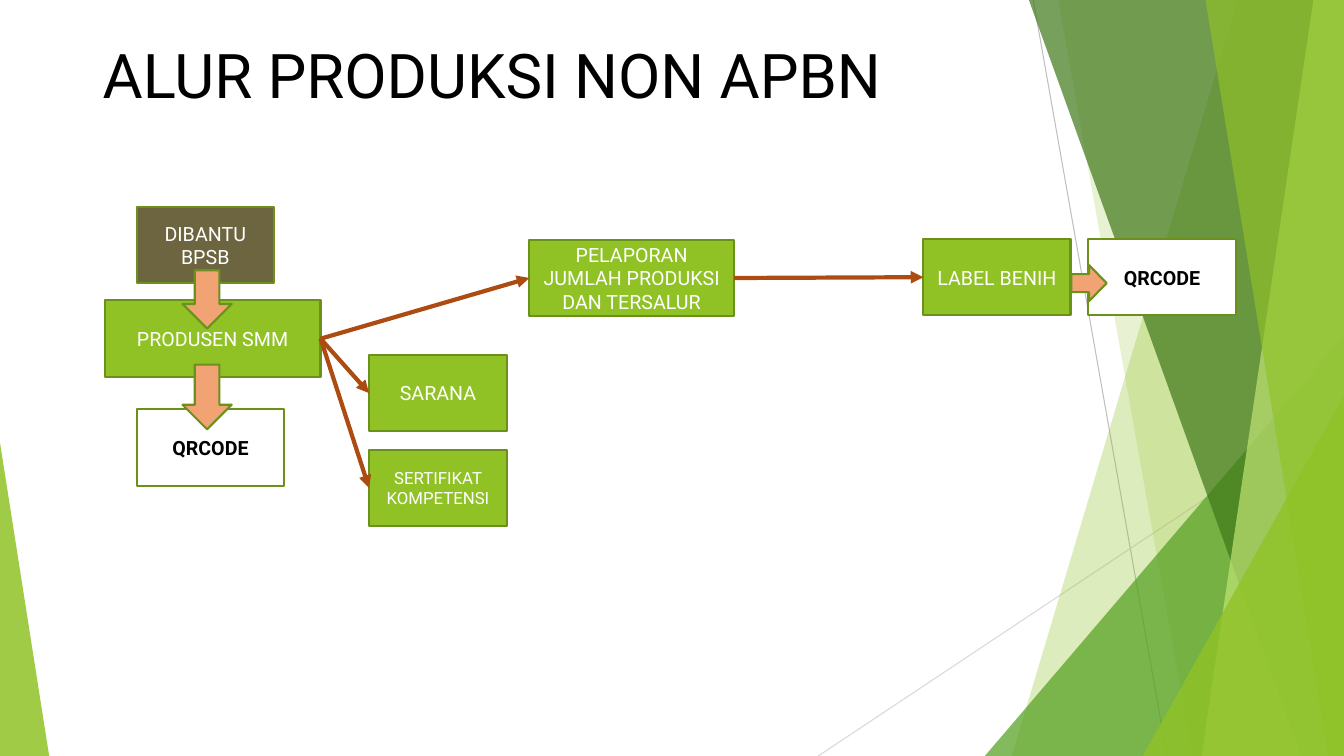
from dataclasses import dataclass

from lxml.etree import SubElement
from pptx import Presentation
from pptx.dml.color import RGBColor
from pptx.enum.shapes import MSO_CONNECTOR, MSO_SHAPE
from pptx.enum.text import MSO_ANCHOR, PP_ALIGN
from pptx.oxml.ns import qn
from pptx.shapes.autoshape import Shape
from pptx.shapes.connector import Connector
from pptx.slide import Slide
from pptx.util import Cm, Pt

WIDTH, HEIGHT = 33.87, 19.05
FONT = "Roboto"
GREEN, DARK_GREEN, WHITE, BLACK = "90C226", "6B901C", "FFFFFF", "000000"
OLIVE, PEACH, RUST = "6D6540", "F1A374", "AD4C12"
RIGHT_SIDE, LEFT_SIDE = 3, 1
BOX_HEIGHT = 1.93


# All lengths are in centimetres
@dataclass
class Panel:
    """Band that fills the slide from a slanted left edge to the right side."""
    top_x: float
    bottom_x: float
    color: str
    opacity: int


@dataclass
class Wedge:
    """Right triangle standing on the bottom of the slide."""
    left: float
    top: float
    width: float
    apex: float
    color: str
    opacity: int


@dataclass
class Box:
    name: str
    text: str
    left: float
    top: float
    width: float
    fill: str = GREEN
    color: str = WHITE
    size: int = 14
    bold: bool = False


@dataclass
class Arrow:
    kind: MSO_SHAPE
    left: float
    top: float
    width: float
    height: float


HAIRLINES = [
    ((26.04, 0), (29.41, HEIGHT), "BFBFBF"),
    ((WIDTH, 10.24), (20.62, HEIGHT), "D9D9D9"),
]
BACKDROP = [
    Panel(31.19, 25.5, GREEN, 30),
    Panel(26.67, 30.05, GREEN, 20),
    Wedge(24.82, 8.46, 9.05, 1, "54A021", 72),
    Panel(25.93, 32.79, "3F7819", 70),
    Panel(33.1, 30.28, "C0E474", 70),
    Panel(30.38, 33.48, GREEN, 65),
    Wedge(28.8, 9.98, 5.07, 1, GREEN, 80),
    Wedge(0, 11.15, 1.24, 0, GREEN, 85),
]
BOXES = [
    Box("produsen", "PRODUSEN SMM", 2.64, 7.57, 5.44),
    Box("sarana", "SARANA", 9.3, 8.94, 3.48),
    Box("sertifikat", "SERTIFIKAT KOMPETENSI", 9.3, 11.33, 3.48, size=12),
    Box("pelaporan", "PELAPORAN JUMLAH PRODUKSI DAN TERSALUR", 13.34, 6.04, 5.16),
    Box("label", "LABEL BENIH", 23.27, 6.02, 3.71),
    Box("qrcode label", "QRCODE", 27.43, 6.02, 3.71, WHITE, BLACK, bold=True),
    Box("qrcode produsen", "QRCODE", 3.45, 10.31, 3.71, WHITE, BLACK, bold=True),
    Box("bpsb", "DIBANTU BPSB", 3.45, 5.21, 3.45, OLIVE),
]
FLOWS = [
    ("produsen", "pelaporan"),
    ("produsen", "sarana"),
    ("produsen", "sertifikat"),
    ("pelaporan", "label"),
]
ARROWS = [
    Arrow(MSO_SHAPE.DOWN_ARROW, 4.6, 9.19, 1.24, 1.63),
    Arrow(MSO_SHAPE.RIGHT_ARROW, 27, 6.68, 0.89, 0.91),
    Arrow(MSO_SHAPE.DOWN_ARROW, 4.6, 6.81, 1.24, 1.47),
]


def rgb(color: str) -> RGBColor:
    return RGBColor.from_string(color)


def paint(shape: Shape, fill: str, line: str | None = None, opacity: int = 100) -> None:
    shape.shadow.inherit = False
    shape.fill.solid()
    shape.fill.fore_color.rgb = rgb(fill)
    if opacity < 100:
        fill_color = shape.fill._xPr.find(qn("a:solidFill"))[0]
        SubElement(fill_color, qn("a:alpha"), val=str(opacity * 1000))
    if line:
        shape.line.color.rgb = rgb(line)
        shape.line.width = Pt(1.5)
    else:
        shape.line.fill.background()


def add_line(slide: Slide, start: tuple[float, float], end: tuple[float, float],
             color: str, width: float) -> Connector:
    connector = slide.shapes.add_connector(
        MSO_CONNECTOR.STRAIGHT, *(Cm(value) for value in (*start, *end)))
    connector.line.color.rgb = rgb(color)
    connector.line.width = Pt(width)
    SubElement(connector._element.spPr, qn("a:effectLst"))
    return connector


def add_panel(slide: Slide, panel: Panel) -> None:
    builder = slide.shapes.build_freeform(Cm(panel.top_x), 0)
    corners = [(WIDTH, 0), (WIDTH, HEIGHT), (panel.bottom_x, HEIGHT)]
    builder.add_line_segments([(Cm(x), Cm(y)) for x, y in corners], close=True)
    paint(builder.convert_to_shape(), panel.color, opacity=panel.opacity)


def add_wedge(slide: Slide, wedge: Wedge) -> None:
    shape = slide.shapes.add_shape(
        MSO_SHAPE.ISOSCELES_TRIANGLE, Cm(wedge.left), Cm(wedge.top),
        Cm(wedge.width), Cm(HEIGHT - wedge.top))
    shape.adjustments[0] = wedge.apex
    paint(shape, wedge.color, opacity=wedge.opacity)


def add_box(slide: Slide, box: Box) -> Shape:
    shape = slide.shapes.add_shape(
        MSO_SHAPE.RECTANGLE, Cm(box.left), Cm(box.top), Cm(box.width), Cm(BOX_HEIGHT))
    paint(shape, box.fill, DARK_GREEN)
    shape.text_frame.word_wrap = True
    shape.text_frame.vertical_anchor = MSO_ANCHOR.MIDDLE
    paragraph = shape.text_frame.paragraphs[0]
    paragraph.text = box.text
    paragraph.alignment = PP_ALIGN.CENTER
    paragraph.font.name = FONT
    paragraph.font.size = Pt(box.size)
    paragraph.font.bold = box.bold
    paragraph.font.color.rgb = rgb(box.color)
    return shape


def add_flow(slide: Slide, source: Shape, target: Shape) -> None:
    connector = add_line(slide, (0, 0), (0, 0), RUST, 3)
    connector.begin_connect(source, RIGHT_SIDE)
    connector.end_connect(target, LEFT_SIDE)
    SubElement(connector.line._get_or_add_ln(), qn("a:tailEnd"), type="triangle")


def add_arrow(slide: Slide, arrow: Arrow) -> None:
    shape = slide.shapes.add_shape(
        arrow.kind, Cm(arrow.left), Cm(arrow.top), Cm(arrow.width), Cm(arrow.height))
    paint(shape, PEACH, DARK_GREEN)


def add_title(slide: Slide, text: str) -> None:
    title = slide.shapes.add_textbox(Cm(2.34), Cm(1.02), Cm(29.21), Cm(3.68))
    title.text_frame.word_wrap = True
    paragraph = title.text_frame.paragraphs[0]
    paragraph.text = text
    paragraph.line_spacing = 0.9
    paragraph.font.name = FONT
    paragraph.font.size = Pt(44)
    paragraph.font.color.rgb = rgb(BLACK)


def main() -> None:
    presentation = Presentation()
    presentation.slide_width, presentation.slide_height = Cm(WIDTH), Cm(HEIGHT)
    slide = presentation.slides.add_slide(presentation.slide_layouts[6])

    # Backdrop
    for start, end, color in HAIRLINES:
        add_line(slide, start, end, color, 0.75)
    for part in BACKDROP:
        if isinstance(part, Panel):
            add_panel(slide, part)
        else:
            add_wedge(slide, part)

    # Flow chart
    shapes = {box.name: add_box(slide, box) for box in BOXES}
    for source, target in FLOWS:
        add_flow(slide, shapes[source], shapes[target])
    for arrow in ARROWS:
        add_arrow(slide, arrow)

    add_title(slide, "ALUR PRODUKSI NON APBN")
    presentation.save("out.pptx")


if __name__ == "__main__":
    main()
